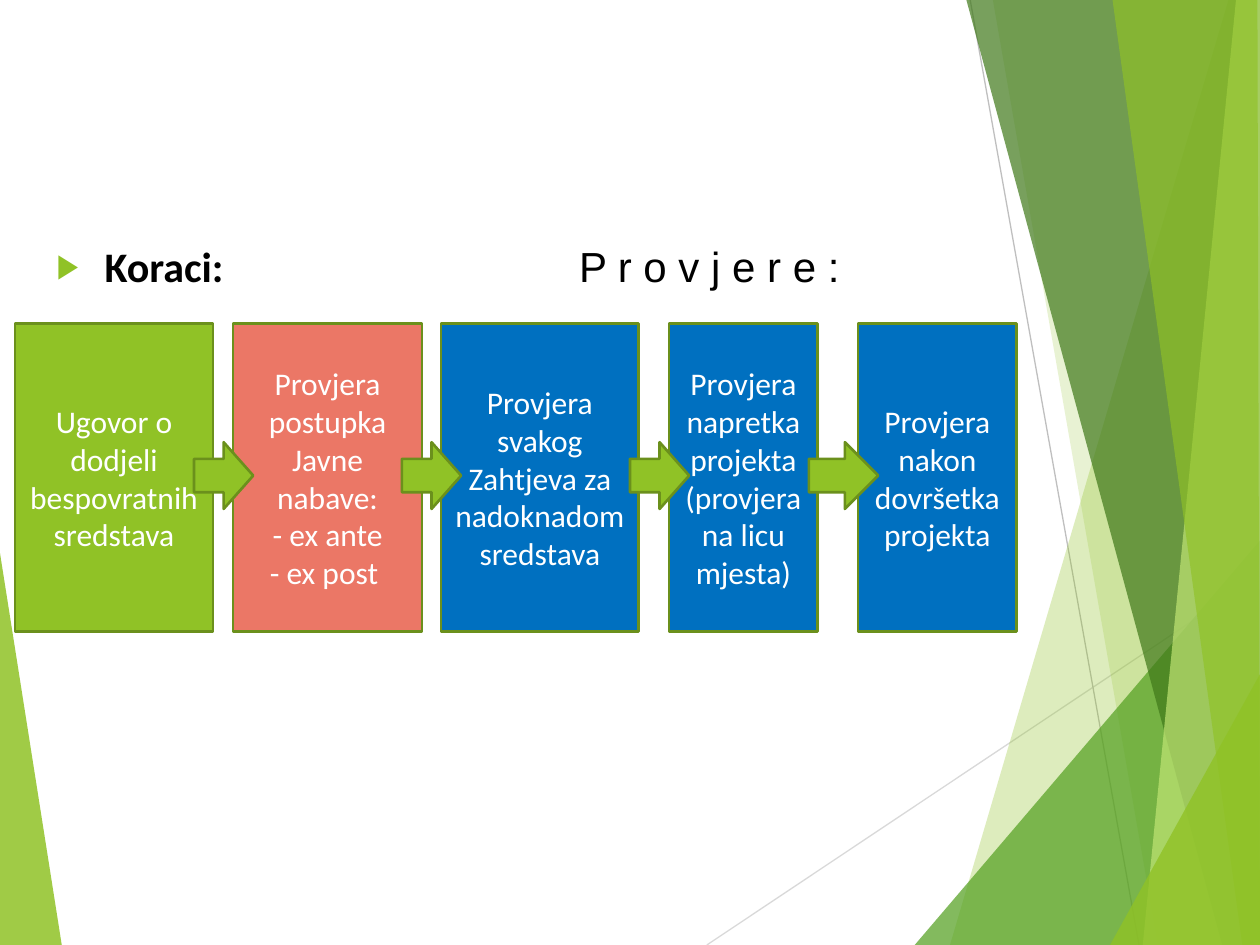
from dataclasses import dataclass
from itertools import pairwise
from typing import NamedTuple

from lxml.etree import SubElement
from pptx import Presentation
from pptx.dml.color import RGBColor
from pptx.enum.shapes import MSO_CONNECTOR as Connector, MSO_SHAPE as Preset
from pptx.enum.text import MSO_ANCHOR as Anchor, MSO_AUTO_SIZE as AutoSize, PP_ALIGN as Align
from pptx.oxml.ns import qn
from pptx.util import Inches, Pt


@dataclass(frozen=True)
class Theme:
    """Colours, fonts and type sizes of the slide."""
    green: str = "90C226"
    outline: str = "6B901C"
    coral: str = "EB7766"
    blue: str = "0070C0"
    leaf: str = "54A021"
    forest: str = "3F7819"
    lime: str = "C0E474"
    pale_grey: str = "D9D9D9"
    grey: str = "BFBFBF"
    white: str = "FFFFFF"
    black: str = "000000"
    text_font: str = "Calibri"
    label_font: str = "Arial"
    heading_size: int = 24
    step_size: int = 18


class Facet(NamedTuple):
    """A translucent polygon of the background."""
    color: str
    opacity: int
    points: list[tuple[float, float]]


class Ray(NamedTuple):
    """A thin background line."""
    color: str
    start: tuple[float, float]
    end: tuple[float, float]


class Step(NamedTuple):
    """A box of the process; arrow_width is that of the arrow leading into it."""
    left: float
    width: float
    color: str
    lines: list[str]
    arrow_width: float = 0.47


THEME = Theme()
STEP_TOP, STEP_HEIGHT = 2.57, 2.44
ARROW_TOP, ARROW_HEIGHT, ARROW_OVERLAP = 3.51, 0.53, 0.16

RAYS = [
    Ray(THEME.pale_grey, (5.61, 7.5), (10, 4.57)),
    Ray(THEME.grey, (7.7, 0), (9.04, 7.5)),
]
FACETS = [
    Facet(THEME.green, 85, [(0, 4.39), (0.49, 7.5), (0, 7.5)]),
    Facet(THEME.green, 30, [(9.75, 0), (7.54, 7.5), (10, 7.5), (10, 0)]),
    Facet(THEME.green, 20, [(7.88, 0), (9.19, 7.5), (10, 7.5), (10, 0)]),
    Facet(THEME.leaf, 72, [(7.26, 7.5), (10, 4.29), (10, 7.5)]),
    Facet(THEME.forest, 70, [(7.67, 0), (9.7, 7.5), (10, 7.5), (10, 0)]),
    Facet(THEME.lime, 70, [(9.81, 0), (9.07, 7.5), (10, 7.5), (10, 0)]),
    Facet(THEME.green, 65, [(8.83, 0), (9.86, 7.5), (10, 7.5), (9.98, 0)]),
    Facet(THEME.green, 80, [(8.81, 7.5), (10, 5.35), (10, 7.5)]),
]
STEPS = [
    Step(0.12, 1.57, THEME.green, ["Ugovor o dodjeli bespovratnih sredstava"]),
    Step(1.85, 1.5, THEME.coral,
         ["Provjera postupka Javne nabave:", "- ex ante", "- ex post "]),
    Step(3.5, 1.57, THEME.blue, ["Provjera svakog Zahtjeva za nadoknadom sredstava"]),
    Step(5.31, 1.18, THEME.blue, ["Provjera napretka projekta (provjera na licu mjesta)"]),
    Step(6.81, 1.26, THEME.blue, ["Provjera nakon dovršetka projekta"], 0.55),
]


def rgb(color: str) -> RGBColor:
    """Turn a hex string into a colour."""
    return RGBColor.from_string(color)


def style_para(para, font: str, size: int, color: str, bold: bool = False) -> None:
    """Set the font of a whole paragraph."""
    para.font.name = font
    para.font.size = Pt(size)
    para.font.bold = bold
    para.font.color.rgb = rgb(color)


def draw_ray(page, ray: Ray) -> None:
    """Draw a thin line without shadow."""
    line = page.shapes.add_connector(
        Connector.STRAIGHT, *map(Inches, (*ray.start, *ray.end)))
    line.line.color.rgb = rgb(ray.color)
    line.line.width = Pt(0.75)
    SubElement(line._element.spPr, qn("a:effectLst"))


def draw_facet(page, facet: Facet) -> None:
    """Draw a translucent polygon without outline."""
    first, *rest = [(Inches(x), Inches(y)) for x, y in facet.points]
    builder = page.shapes.build_freeform(*first)
    builder.add_line_segments(rest, close=True)
    shape = builder.convert_to_shape()
    shape.shadow.inherit = False
    shape.line.fill.background()
    shape.fill.solid()
    shape.fill.fore_color.rgb = rgb(facet.color)
    color = shape._element.spPr.find(qn("a:solidFill"))[0]
    SubElement(color, qn("a:alpha"), val=str(facet.opacity * 1000))


def draw_shape(page, preset, left: float, top: float, width: float, height: float, color: str):
    """Add a filled preset shape with the green outline."""
    shape = page.shapes.add_shape(preset, *map(Inches, (left, top, width, height)))
    shape.shadow.inherit = False
    shape.fill.solid()
    shape.fill.fore_color.rgb = rgb(color)
    shape.line.color.rgb = rgb(THEME.outline)
    shape.line.width = Pt(1.5)
    return shape


def draw_step(page, step: Step) -> None:
    """Draw one process box with its text."""
    box = draw_shape(page, Preset.RECTANGLE, step.left, STEP_TOP,
                     step.width, STEP_HEIGHT, step.color)
    frame = box.text_frame
    frame.word_wrap = True
    frame.vertical_anchor = Anchor.MIDDLE
    frame.text = "\n".join(step.lines)
    for para in frame.paragraphs:
        para.alignment = Align.CENTER
        style_para(para, THEME.text_font, THEME.step_size, THEME.white)


def draw_arrow(page, target: Step) -> None:
    """Draw the arrow whose tip reaches into the target box."""
    left = target.left + ARROW_OVERLAP - target.arrow_width
    draw_shape(page, Preset.RIGHT_ARROW, left, ARROW_TOP,
               target.arrow_width, ARROW_HEIGHT, THEME.green)


def fill_body(body) -> None:
    """Place the bulleted heading in the body placeholder."""
    body.left, body.top, body.width, body.height = map(Inches, (0.35, 1.86, 7.52, 5.43))
    frame = body.text_frame
    frame.auto_size = AutoSize.NONE
    frame.text = "Koraci:"
    para = frame.paragraphs[0]
    para.space_before = Pt(0)
    props = para._p.get_or_add_pPr()
    props.set("marL", str(Inches(0.38)))
    props.set("indent", str(Inches(-0.38)))
    SubElement(SubElement(props, qn("a:buClr")), qn("a:srgbClr"), val=THEME.green)
    SubElement(props, qn("a:buSzPct"), val="80000")
    SubElement(props, qn("a:buFont"), typeface=THEME.label_font)
    SubElement(props, qn("a:buChar"), char="▶")
    style_para(para, THEME.text_font, THEME.heading_size, THEME.black, bold=True)


def draw_label(page) -> None:
    """Draw the label above the checks."""
    box = page.shapes.add_textbox(*map(Inches, (3.9, 1.86, 3.46, 0.5)))
    frame = box.text_frame
    frame.word_wrap = True
    frame.text = "P r o v j e r e :"
    para = frame.paragraphs[0]
    para.alignment = Align.CENTER
    style_para(para, THEME.label_font, THEME.heading_size, THEME.black)


def main() -> None:
    """Build and save the slide."""
    deck = Presentation()
    deck.slide_width, deck.slide_height = Inches(10), Inches(7.5)
    page = deck.slides.add_slide(deck.slide_layouts[1])
    title = page.shapes.title._element
    title.getparent().remove(title)
    fill_body(page.placeholders[1])
    left_facet, *right_facets = FACETS
    draw_facet(page, left_facet)
    for ray in RAYS:
        draw_ray(page, ray)
    for facet in right_facets:
        draw_facet(page, facet)
    for step in STEPS:
        draw_step(page, step)
    for _, target in pairwise(STEPS):
        draw_arrow(page, target)
    draw_label(page)
    deck.save("out.pptx")


if __name__ == "__main__":
    main()
